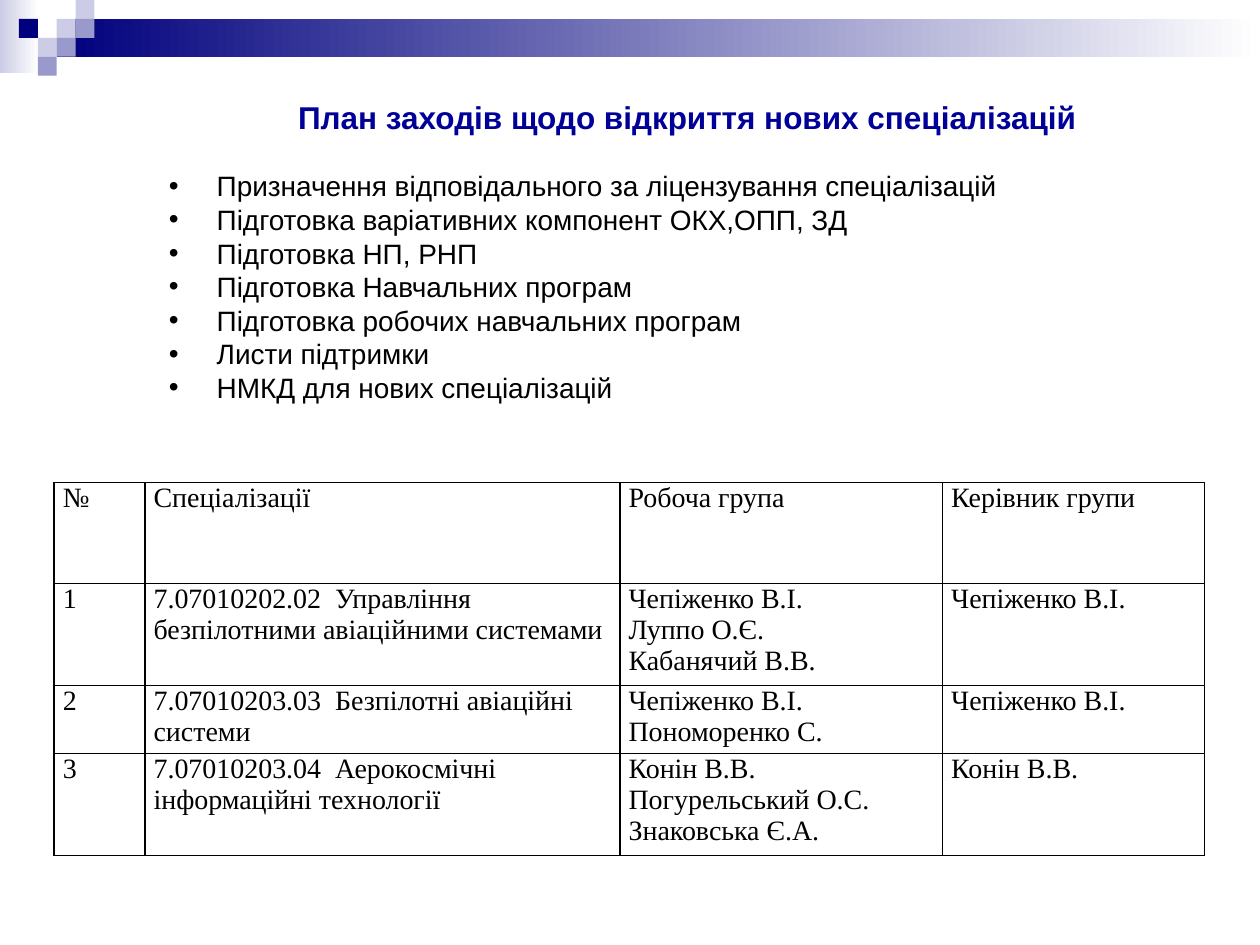
from lxml.etree import SubElement
from pptx import Presentation
from pptx.dml.color import RGBColor as RGB
from pptx.enum.shapes import MSO_SHAPE as Shape
from pptx.enum.text import MSO_ANCHOR as Anchor, MSO_AUTO_SIZE as AutoSize, PP_ALIGN as Align
from pptx.oxml.ns import qn
from pptx.util import Inches, Pt

COLORS = {"navy": "00007D", "title": "000099", "mid": "9999CC",
          "pale": "CCCCE6", "white": "FFFFFF", "black": "000000"}

deck = Presentation()
deck.slide_width, deck.slide_height = Inches(10), Inches(7.5)
page = deck.slides.add_slide(deck.slide_layouts[1])


def add_block(left, top, width, height, color, fade=False):
    """Add a borderless rectangle, optionally fading to white on the right."""
    block = page.shapes.add_shape(
        Shape.RECTANGLE, Inches(left), Inches(top), Inches(width), Inches(height))
    block.shadow.inherit = False
    block.line.fill.background()
    if fade:
        block.fill.gradient()
        block.fill.gradient_angle = 0
        for stop, name, position in zip(block.fill.gradient_stops, (color, "white"), (0, 1)):
            stop.color.rgb = RGB.from_string(COLORS[name])
            stop.position = position
    else:
        block.fill.solid()
        block.fill.fore_color.rgb = RGB.from_string(COLORS[color])


def add_text(para, text, font, size, color, bold=False):
    """Add one formatted run to a paragraph."""
    span = para.add_run()
    span.text = text
    span.font.name, span.font.size, span.font.bold = font, Pt(size), bold
    span.font.color.rgb = RGB.from_string(COLORS[color])


# Header band and its mosaic of squares, on a 0.15 inch grid
UNIT = 0.15
add_block(0, 0, 0.31, 0.58, "pale", fade=True)
add_block(3 * UNIT, UNIT, 10 - 3 * UNIT, 2 * UNIT, "navy", fade=True)
squares = [(3, 1, "pale"), (4, 0, "pale"), (4, 1, "mid"), (2, 2, "pale"),
           (1, 1, "navy"), (3, 2, "mid"), (2, 3, "mid")]
for column, row, color in squares:
    add_block(column * UNIT, row * UNIT, UNIT, UNIT, color)

# Title and list placeholders
title, body = page.shapes.title, page.placeholders[1]
frames = [(title, 2.13, 0.71, 6.65, 0.44, Anchor.MIDDLE),
          (body, 1.24, 1.29, 7.54, 2.1, Anchor.TOP)]
for box, left, top, width, height, anchor in frames:
    box.left, box.top = Inches(left), Inches(top)
    box.width, box.height = Inches(width), Inches(height)
    frame = box.text_frame
    frame.word_wrap, frame.auto_size, frame.vertical_anchor = True, AutoSize.NONE, anchor

heading = title.text_frame.paragraphs[0]
heading.alignment = Align.CENTER
add_text(heading, "План заходів щодо відкриття нових спеціалізацій", "Arial", 18, "title", True)

steps = ["Призначення відповідального за ліцензування спеціалізацій",
         "Підготовка варіативних компонент ОКХ,ОПП, ЗД",
         "Підготовка НП, РНП",
         "Підготовка Навчальних програм",
         "Підготовка робочих навчальних програм",
         "Листи підтримки",
         "НМКД для нових спеціалізацій"]
for index, step in enumerate(steps):
    para = body.text_frame.paragraphs[0] if index == 0 else body.text_frame.add_paragraph()
    para.alignment = Align.JUSTIFY
    para.space_before, para.line_spacing = Pt(0), Pt(19.2)
    properties = para._p.get_or_add_pPr()
    properties.set("marL", str(Inches(0.38)))
    properties.set("indent", str(-Inches(0.38)))
    SubElement(properties, qn("a:buChar")).set("char", "•")
    add_text(para, step, "Arial", 16, "black")

# Table of specialisations; a cell with several names has one paragraph each
rows = [
    ["№", "Спеціалізації", "Робоча група", "Керівник групи"],
    ["1", "7.07010202.02  Управління безпілотними авіаційними системами",
     "Чепіженко В.І.\nЛуппо О.Є.\nКабанячий В.В.", "Чепіженко В.І."],
    ["2", "7.07010203.03  Безпілотні авіаційні системи",
     "Чепіженко В.І.\nПономоренко С.", "Чепіженко В.І."],
    ["3", "7.07010203.04  Аерокосмічні інформаційні технології",
     "Конін В.В.\nПогурельський О.С.\nЗнаковська Є.А.", "Конін В.В."],
]
widths, heights = [0.72, 3.77, 2.56, 2.08], [0.8, 0.81, 0.54, 0.81]
table = page.shapes.add_table(
    len(rows), len(widths), Inches(0.43), Inches(3.83),
    Inches(sum(widths)), Inches(sum(heights))).table
table.first_row = table.horz_banding = False
for column, width in zip(table.columns, widths):
    column.width = Inches(width)
for row, height in zip(table.rows, heights):
    row.height = Inches(height)

for row, texts in zip(table.rows, rows):
    for cell, text in zip(row.cells, texts):
        cell.margin_left = cell.margin_right = Inches(0.07)
        cell.margin_top = cell.margin_bottom = 0
        for index, line in enumerate(text.split("\n")):
            frame = cell.text_frame
            para = frame.paragraphs[0] if index == 0 else frame.add_paragraph()
            add_text(para, line, "Times New Roman", 16, "black")
        # Borders come before the fill in the cell properties
        properties = cell._tc.get_or_add_tcPr()
        for side in ("lnL", "lnR", "lnT", "lnB"):
            border = SubElement(properties, qn(f"a:{side}"), w=str(Pt(1)))
            paint = SubElement(border, qn("a:solidFill"))
            SubElement(paint, qn("a:srgbClr"), val=COLORS["black"])
        cell.fill.background()

deck.save("out.pptx")
